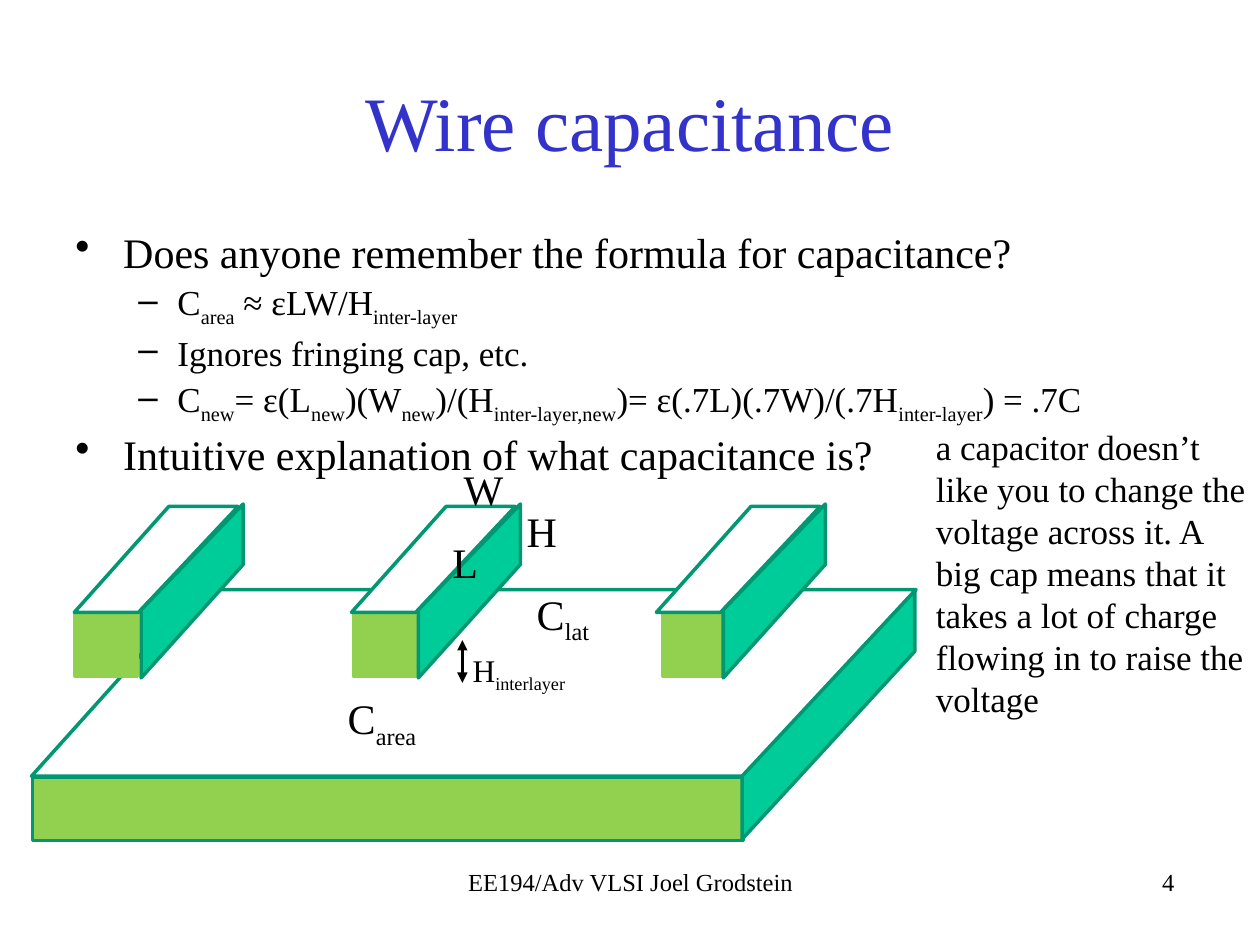
from lxml import etree
from pptx import Presentation
from pptx.dml.color import RGBColor
from pptx.enum.shapes import MSO_CONNECTOR, MSO_SHAPE
from pptx.enum.text import MSO_ANCHOR, MSO_AUTO_SIZE, PP_ALIGN
from pptx.oxml.ns import qn
from pptx.util import Inches, Pt

LEFT, CENTER, RIGHT = PP_ALIGN.LEFT, PP_ALIGN.CENTER, PP_ALIGN.RIGHT
MIDDLE = MSO_ANCHOR.MIDDLE
GROW = MSO_AUTO_SIZE.SHAPE_TO_FIT_TEXT
RECTANGLE = MSO_SHAPE.RECTANGLE
STRAIGHT = MSO_CONNECTOR.STRAIGHT

FONT = "Times New Roman"
BLACK, WHITE, BLUE = "000000", "FFFFFF", "3333CC"
GREEN, TEAL, EDGE = "92D050", "00CC99", "009771"

TITLE_ONLY = 5
# Text between bars is subscript: "C|area|"
BODY = [
    (0, "Does anyone remember the formula for capacitance?"),
    (1, "C|area| ≈ εLW/H|inter-layer|"),
    (1, "Ignores fringing cap, etc."),
    (1, "C|new|= ε(L|new|)(W|new|)/(H|inter-layer,new|)"
        "= ε(.7L)(.7W)/(.7H|inter-layer|) = .7C"),
    (0, "Intuitive explanation of what capacitance is?"),
]
# Level: bullet, size, left margin, hanging indent
LEVELS = [("•", 24, 0.38, 0.38), ("–", 20, 0.81, 0.31)]
EXPLANATION = (
    "a capacitor doesn’t like you to change the voltage across it. A big cap "
    "means that it takes a lot of charge flowing in to raise the voltage")
# Left, top, width, height, size, text
LABELS = [
    (3.68, 3.68, 0.42, 0.4, 24, "W"),
    (3.59, 4.26, 0.42, 0.4, 24, "L"),
    (4.18, 4.01, 0.42, 0.4, 24, "H"),
    (2.76, 5.5, 1.08, 0.4, 24, "C|area|"),
    (4.26, 4.67, 1.08, 0.4, 24, "C|lat|"),
    (3.75, 5.17, 0.92, 0.3, 18, "H|interlayer|"),
]
# Left of the wire's top, left of its front face
WIRES = [(0.59, 0.59), (2.79, 2.81), (5.21, 5.26)]


def color(hex_code):
    return RGBColor.from_string(hex_code)


def style_font(font, size, hex_code=BLACK):
    font.name, font.size = FONT, Pt(size)
    font.color.rgb = color(hex_code)


def write(paragraph, text, size):
    for index, part in enumerate(text.split("|")):
        if not part:
            continue
        run = paragraph.add_run()
        run.text = part
        style_font(run.font, size)
        if index % 2:
            run.font._element.set("baseline", "-25000")


def add_frame(slide, box):
    frame = slide.shapes.add_textbox(*map(Inches, box)).text_frame
    frame.word_wrap = True
    return frame


def add_text(slide, box, text, size, align=LEFT, inset=True, grow=False):
    frame = add_frame(slide, box)
    if grow:
        frame.auto_size = GROW
    if not inset:
        frame.margin_left = frame.margin_right = 0
        frame.margin_top = frame.margin_bottom = 0
    frame.paragraphs[0].alignment = align
    write(frame.paragraphs[0], text, size)


def add_bullets(slide, box, items):
    frame = add_frame(slide, box)
    for index, (level, text) in enumerate(items):
        paragraph = frame.add_paragraph() if index else frame.paragraphs[0]
        bullet, size, margin, hanging = LEVELS[level]
        paragraph.level = level
        paragraph.space_before = Pt(2)
        properties = paragraph._p.get_or_add_pPr()
        properties.set("marL", str(Inches(margin)))
        properties.set("indent", str(-Inches(hanging)))
        etree.SubElement(properties, qn("a:buChar")).set("char", bullet)
        write(paragraph, text, size)


def paint(shape, fill, edge=EDGE):
    shape.shadow.inherit = False
    shape.fill.solid()
    shape.fill.fore_color.rgb = color(fill)
    shape.line.color.rgb = color(edge)
    shape.line.width = Pt(2)


def add_face(slide, box, edge):
    paint(slide.shapes.add_shape(RECTANGLE, *map(Inches, box)), GREEN, edge)


def add_polygon(slide, points, fill):
    start, *others = [(Inches(x), Inches(y)) for x, y in points]
    builder = slide.shapes.build_freeform(*start, scale=1.0)
    builder.add_line_segments(others, close=True)
    paint(builder.convert_to_shape(), fill)


def add_base(slide):
    add_polygon(slide, [(0.25, 6.16), (1.58, 4.68), (7.27, 4.68), (5.9, 6.16)],
                WHITE)
    add_face(slide, (0.26, 6.17, 5.64, 0.5), EDGE)
    add_polygon(slide, [(5.89, 6.66), (5.89, 6.16), (7.26, 4.69), (7.26, 5.17)],
                TEAL)


def add_wire(slide, left, face_left):
    add_face(slide, (face_left, 4.87, 0.5, 0.5), GREEN)
    add_polygon(slide, [(left, 4.86), (left + 0.51, 4.86),
                        (left + 1.3, 4.02), (left + 0.75, 4.02)], WHITE)
    side, back = left + 0.53, left + 1.34
    add_polygon(slide, [(side, 5.38), (side, 4.84), (back, 4), (back, 4.48)],
                TEAL)


def add_double_arrow(slide, x, top, bottom):
    arrow = slide.shapes.add_connector(
        STRAIGHT, Inches(x), Inches(top), Inches(x), Inches(bottom))
    arrow.line.color.rgb = color(BLACK)
    arrow.line.width = Pt(1.5)
    for end in ("a:headEnd", "a:tailEnd"):
        etree.SubElement(arrow.line._ln, qn(end)).set("type", "triangle")
    etree.SubElement(arrow._element.spPr, qn("a:effectLst"))


def set_title(slide, text):
    title = slide.shapes.title
    title.left, title.top = Inches(0.75), Inches(0.33)
    title.width, title.height = Inches(8.5), Inches(1.25)
    frame = title.text_frame
    frame.text = text
    frame.vertical_anchor = MIDDLE
    frame.paragraphs[0].alignment = CENTER
    style_font(frame.paragraphs[0].runs[0].font, 44, BLUE)


def main():
    deck = Presentation()
    deck.slide_width, deck.slide_height = Inches(10), Inches(7.5)
    slide = deck.slides.add_slide(deck.slide_layouts[TITLE_ONLY])

    # Title and questions
    set_title(slide, "Wire capacitance")

    # Three wires above the lower layer
    add_base(slide)
    for left, face_left in WIRES:
        add_wire(slide, left, face_left)
    add_bullets(slide, (0.5, 1.75, 9, 1.8), BODY)

    # Dimensions and explanation
    for *box, size, text in LABELS:
        add_text(slide, box, text, size, inset=False, grow=True)
    add_double_arrow(slide, 3.67, 5.08, 5.42)
    add_text(slide, (7.33, 3.33, 2.67, 2.46), EXPLANATION, 20, grow=True)

    # Footer and slide number
    add_text(slide, (3.42, 6.83, 3.17, 0.5),
             "EE194/Adv VLSI Joel Grodstein", 14, CENTER)
    add_text(slide, (6.25, 6.83, 3.17, 0.5), "4", 14, RIGHT)

    deck.save("out.pptx")


if __name__ == "__main__":
    main()
